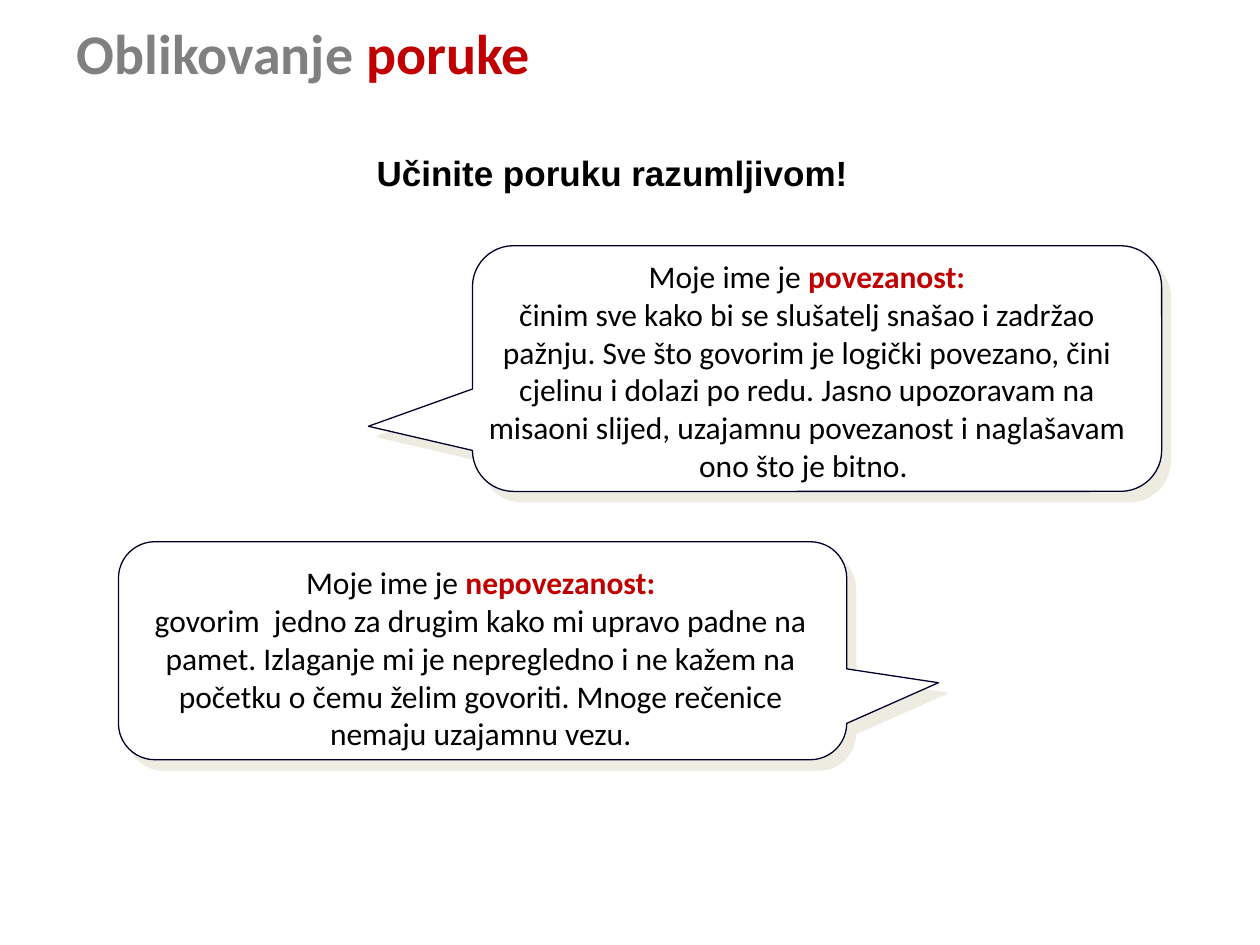
from dataclasses import dataclass

from lxml import etree
from pptx import Presentation
from pptx import util as u
from pptx.dml.color import RGBColor
from pptx.enum import shapes, text
from pptx.oxml.ns import qn


@dataclass(frozen=True)
class Theme:
    gray: str = "808080"
    red: str = "C00000"
    black: str = "000000"
    white: str = "FFFFFF"
    edge: str = "00002A"
    shade: str = "EEECE1"
    font: str = "Calibri"
    plain: str = "Arial"
    head: int = 32
    sub: int = 20
    body: int = 18


class Page:
    def __init__(self, deck, theme):
        self.theme = theme
        self.slide = deck.slides.add_slide(deck.slide_layouts[5])

    def place(self, shape, box):
        shape.left, shape.top, shape.width, shape.height = map(u.Inches, box)

    def fill(self, para, runs, size, font, align, bold=None):
        """Fill a paragraph with (words, colour, bold) runs."""
        para.alignment = align
        para.font.size, para.font.name = u.Pt(size), font
        para.font.bold = bold
        for words, color, strong in runs:
            run = para.add_run()
            run.text = words
            run.font.color.rgb = RGBColor.from_string(color)
            if strong != bold:
                run.font.bold = strong

    def title(self, box, first, last):
        t = self.theme
        shape = self.slide.shapes.title
        self.place(shape, box)
        shape.text_frame.vertical_anchor = text.MSO_ANCHOR.MIDDLE
        runs = [(first, t.gray, True), (last, t.red, True)]
        self.fill(shape.text_frame.paragraphs[0], runs, t.head, t.font,
                  text.PP_ALIGN.LEFT, True)

    def frame(self, box):
        shape = self.slide.shapes.add_textbox(*map(u.Inches, box))
        shape.text_frame.word_wrap = True
        return shape.text_frame

    def lead(self, box, words):
        t = self.theme
        self.fill(self.frame(box).paragraphs[0], [(words, t.black, True)],
                  t.sub, t.plain, text.PP_ALIGN.LEFT, True)

    def bubble(self, box, tip):
        t = self.theme
        kind = shapes.MSO_SHAPE.ROUNDED_RECTANGULAR_CALLOUT
        shape = self.slide.shapes.add_shape(kind, *map(u.Inches, box))
        for i, value in enumerate((*tip, 0.167)):
            shape.adjustments[i] = value
        shape.fill.solid()
        shape.fill.fore_color.rgb = RGBColor.from_string(t.white)
        shape.line.color.rgb = RGBColor.from_string(t.edge)
        shape.line.width = u.Pt(0.75)
        self.shadow(shape)

    def shadow(self, shape):
        """Add a hard shadow, 7.8 points away at 50 degrees."""
        shape.shadow.inherit = False
        effects = shape._element.spPr.find(qn("a:effectLst"))
        outer = etree.SubElement(effects, qn("a:outerShdw"), blurRad="0",
                                 dist=str(u.Pt(7.8)), dir=str(50 * 60000),
                                 algn="ctr", rotWithShape="0")
        etree.SubElement(outer, qn("a:srgbClr"), val=self.theme.shade)

    def speech(self, box, name, words):
        t = self.theme
        frame = self.frame(box)
        intro = [("Moje ime je ", t.black, None), (name, t.red, True)]
        rest = [(words, t.black, None)]
        for para, runs in ((frame.paragraphs[0], intro),
                           (frame.add_paragraph(), rest)):
            self.fill(para, runs, t.body, t.font, text.PP_ALIGN.CENTER)


def main():
    deck = Presentation()
    deck.slide_width, deck.slide_height = u.Inches(10), u.Inches(7.5)
    page = Page(deck, Theme())
    page.title((0.51, 0.05, 7.97, 0.72), "Oblikovanje ", "poruke")
    page.lead((2.89, 1.15, 4.06, 0.44), "Učinite poruku razumljivom!")
    page.bubble((0.94, 4.3, 5.78, 1.73), (0.626, 0.147))
    page.bubble((3.75, 1.95, 5.47, 1.95), (-0.651, 0.235))
    page.speech(
        (1.04, 4.42, 5.55, 1.62), "nepovezanost:",
        "govorim  jedno za drugim kako mi upravo padne na pamet. "
        "Izlaganje mi je nepregledno i ne kažem na početku o čemu želim "
        "govoriti. Mnoge rečenice nemaju uzajamnu vezu.")
    page.speech(
        (3.63, 1.99, 5.55, 1.92), "povezanost:",
        "činim sve kako bi se slušatelj snašao i zadržao pažnju. "
        "Sve što govorim je logički povezano, čini cjelinu i dolazi po redu. "
        "Jasno upozoravam na misaoni slijed, uzajamnu povezanost i "
        "naglašavam ono što je bitno. ")
    deck.save("out.pptx")


if __name__ == "__main__":
    main()
